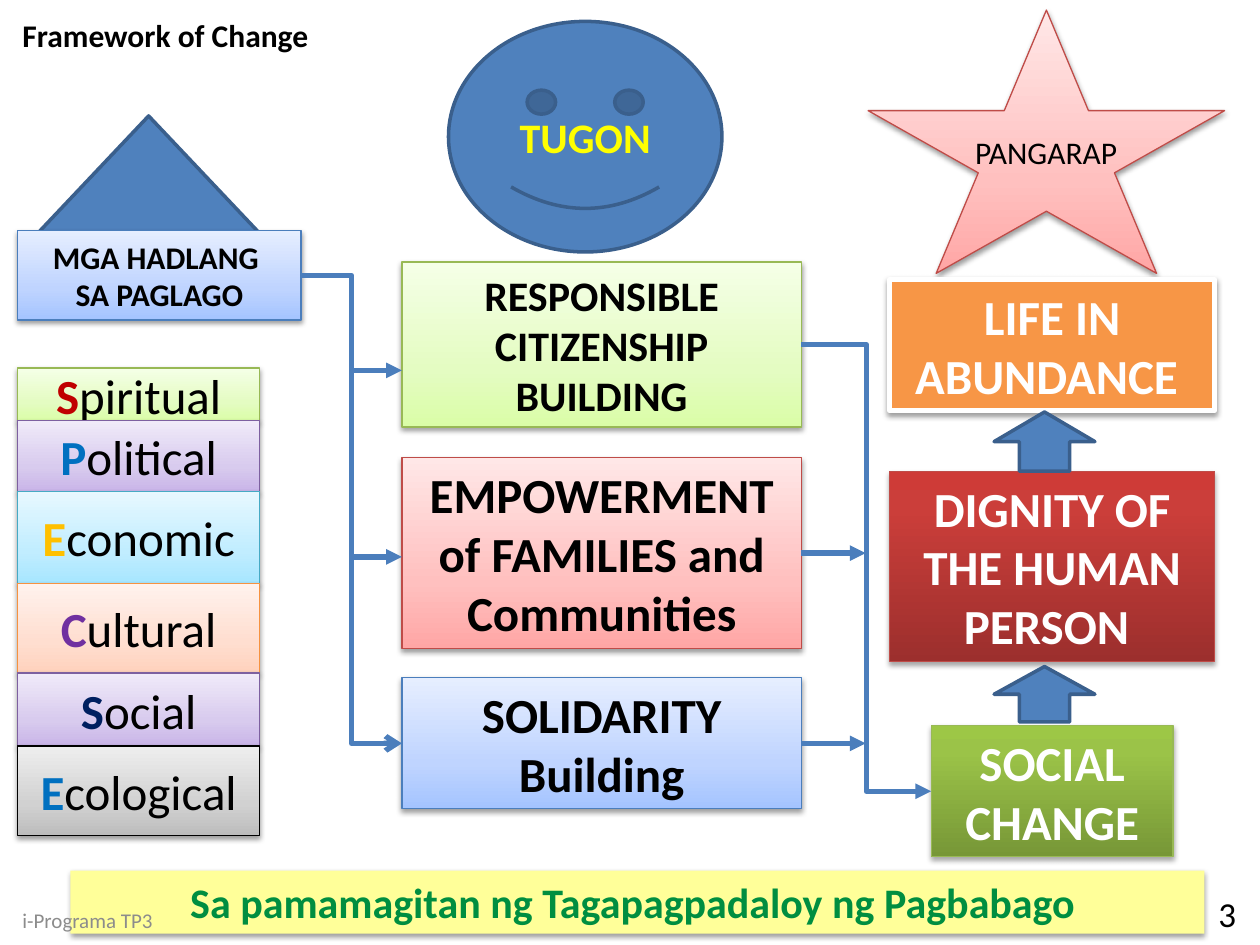
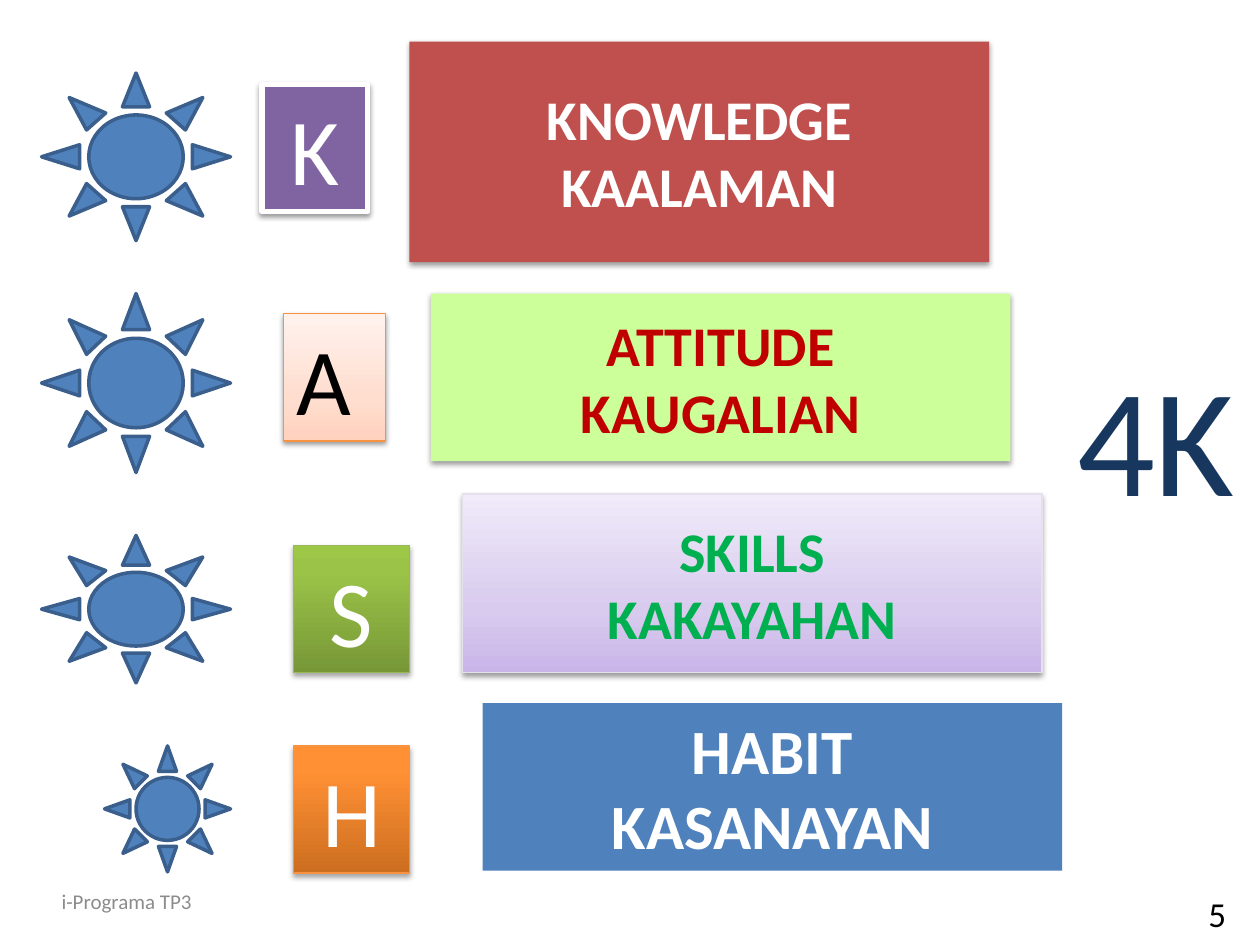
from itertools import accumulate

from lxml import etree
from pptx import Presentation
from pptx.dml.color import RGBColor
from pptx.enum.shapes import MSO_CONNECTOR as Connector, MSO_SHAPE as Preset
from pptx.enum.text import MSO_ANCHOR as Anchor, MSO_AUTO_SIZE as AutoSize, PP_ALIGN as Align
from pptx.oxml.ns import qn
from pptx.util import Inches, Pt

# Shared look
FONT = "Calibri"
COLORS = {
    "black": "000000", "white": "FFFFFF", "grey": "8C8C8C",
    "blue": "4F81BD", "blue edge": "3A5F8C", "connector": "4B7EBC",
    "orange": "F79646", "orange edge": "F69240", "brick": "C0504D",
    "red edge": "BF4C48", "green edge": "98B955", "purple": "8064A2",
    "purple edge": "7D60A0", "aqua edge": "46AAC5", "lilac edge": "E6E0EC",
    "lemon": "FFFF99", "lime": "CCFF99", "yellow": "FFFF00",
    "red text": "C00000", "blue text": "0070C0", "gold text": "FFC000",
    "violet text": "7030A0", "navy text": "002060", "leaf text": "008E40",
    "green text": "00B050", "4K text": "17375E",
}
# Gradient stops run from the bottom edge to the top: (percent, hex)
GRADIENTS = {
    "pale red": [(0, "FFA6A5"), (35, "FFC0BF"), (100, "FFE7E7")],
    "pale green": [(0, "DAFDA7"), (35, "E4FCC2"), (100, "F5FFE7")],
    "pale purple": [(0, "C9B5E8"), (35, "D8CBEE"), (100, "F0EAF9")],
    "pale aqua": [(0, "A7E6FF"), (35, "C1EDFF"), (100, "E7F8FF")],
    "pale orange": [(0, "FFD2BD"), (35, "FFDED0"), (100, "FFF2ED")],
    "pale grey": [(0, "BDBDBD"), (35, "D1D1D1"), (100, "EEEEEE")],
    "pale blue": [(0, "A4C4FF"), (35, "BFD4FF"), (100, "E6EEFF")],
    "deep red": [(0, "9C2F2D"), (80, "CB3E3A"), (100, "CE3B37")],
    "deep green": [(0, "779737"), (80, "9BC348"), (100, "9DC746")],
    "deep orange": [(0, "CC6E20"), (80, "FF9034"), (100, "FF9136")],
}
# Shadows: opacity in percent, distance in points
SOFT, DEEP = (38, 1.6), (35, 1.8)
# Styles: fill, line colour, line width, shadow
STYLES = {
    "plain": ("blue", "blue edge", 2, None),
    "pale red": ("pale red", "red edge", 0.75, SOFT),
    "pale green": ("pale green", "green edge", 0.75, SOFT),
    "pale purple": ("pale purple", "purple edge", 0.75, SOFT),
    "pale lilac": ("pale purple", "lilac edge", 0.75, SOFT),
    "pale aqua": ("pale aqua", "aqua edge", 0.75, SOFT),
    "pale orange": ("pale orange", "orange edge", 0.75, SOFT),
    "pale grey": ("pale grey", "black", 0.75, SOFT),
    "pale blue": ("pale blue", "connector", 0.75, SOFT),
    "deep red": ("deep red", "red edge", 0.75, DEEP),
    "deep green": ("deep green", "green edge", 0.75, DEEP),
    "deep orange": ("deep orange", "orange edge", 0.75, DEEP),
    "framed orange": ("orange", "white", 3, SOFT),
    "framed purple": ("purple", "white", 3, SOFT),
    "brick": ("brick", None, 0, SOFT),
    "lime": ("lime", None, 0, SOFT),
    "lemon": ("lemon", None, 0, SOFT),
    "flat blue": ("blue", None, 0, None),
}
FOOTER = "i-Programa TP3"

# Slide 1 content: Framework of Change
BARRIERS = [  # word, initial colour, style, height
    ("Spiritual", "red text", "pale green", 0.42),
    ("Political", "blue text", "pale purple", 0.56),
    ("Economic", "gold text", "pale aqua", 0.73),
    ("Cultural", "violet text", "pale orange", 0.71),
    ("Social", "navy text", "pale purple", 0.58),
    ("Ecological", "blue text", "pale grey", 0.71),
]
BARRIER_LEFT, BARRIER_TOP, BARRIER_WIDTH = 0.14, 2.92, 1.92
BOXES = {  # name: place, style, lines, size, colour
    "response": ((3.19, 2.08, 3.17, 1.31), "pale green",
                 ["RESPONSIBLE CITIZENSHIP BUILDING"], 24, "black"),
    "families": ((3.19, 3.63, 3.17, 1.52), "pale red",
                 ["EMPOWERMENT of FAMILIES and Communities"], 28, "black"),
    "solidarity": ((3.19, 5.38, 3.17, 1.04), "pale blue",
                   ["SOLIDARITY Building"], 28, "black"),
    "life": ((7.06, 2.22, 2.58, 1.04), "framed orange", ["LIFE IN ABUNDANCE "], 28, "white"),
    "dignity": ((7.06, 3.74, 2.58, 1.51), "deep red",
                ["DIGNITY OF THE HUMAN PERSON "], 28, "white"),
    "change": ((7.39, 5.76, 1.92, 1.04), "deep green", ["SOCIAL CHANGE"], 28, "white"),
    "barriers": ((0.14, 1.83, 2.25, 0.71), "pale blue",
                 ["MGA HADLANG ", "SA PAGLAGO"], 18, "black"),
    "banner": ((0.56, 6.91, 9, 0.5), "lemon",
               ["Sa pamamagitan ng Tagapagpadaloy ng Pagbabago "], 24, "leaf text"),
}
UP_ARROWS = [(7.89, 5.29, 0.8, 0.44), (7.89, 3.27, 0.8, 0.47)]
LEFT_TRUNK, RIGHT_TRUNK, BOX_LEFT, BOX_RIGHT = 2.79, 6.87, 3.19, 6.36
ARROWS = [  # kind, from, to, start box, end box, head
    (Connector.STRAIGHT, (LEFT_TRUNK, 4.42), (BOX_LEFT, 4.42), None, None, "triangle"),
    (Connector.STRAIGHT, (LEFT_TRUNK, 2.94), (BOX_LEFT, 2.94), None, None, "triangle"),
    (Connector.ELBOW, (BOX_RIGHT, 2.74), (7.39, 6.28), "response", "change", "triangle"),
    (Connector.STRAIGHT, (BOX_RIGHT, 4.39), (RIGHT_TRUNK, 4.39), "families", None, "triangle"),
    (Connector.STRAIGHT, (BOX_RIGHT, 5.9), (RIGHT_TRUNK, 5.9), "solidarity", None, "triangle"),
    (Connector.ELBOW, (2.39, 2.19), (BOX_LEFT, 5.9), "barriers", "solidarity", "arrow"),
]

# Slide 2 content: sun, letter tile and word panel of each row
ROWS = [
    {"sun": (0.33, 0.58, 1.5, 1.33),
     "tile": ("K", (2.08, 0.67, 0.84, 1.01), "framed purple", "white"),
     "panel": (["KNOWLEDGE", "KAALAMAN"], (3.25, 0.33, 1.75), "brick", 32, "white")},
    {"sun": (0.33, 2.33, 1.5, 1.42),
     "tile": ("A ", (2.25, 2.49, 0.81, 1.01), "pale orange", "black"),
     "panel": (["ATTITUDE", "KAUGALIAN"], (3.42, 2.33, 1.33), "lime", 32, "red text")},
    {"sun": (0.33, 4.25, 1.5, 1.17),
     "tile": ("S", (2.33, 4.33, 0.92, 1.01), "deep green", "white"),
     "panel": (["SKILLS", "KAKAYAHAN"], (3.67, 3.92, 1.42), "pale lilac", 32, "green text")},
    {"sun": (0.83, 5.92, 1, 1),
     "tile": ("H", (2.33, 5.92, 0.92, 1.01), "deep orange", "white"),
     "panel": (["HABIT", "KASANAYAN"], (3.83, 5.58, 1.33), "flat blue", 36, "white")},
]
PANEL_WIDTH = 4.6


def rgb(name):
    return RGBColor.from_string(COLORS[name])


def set_values(target, values):
    for name, value in values.items():
        setattr(target, name, value)


def add_color(parent, hex_color):
    return etree.SubElement(parent, qn("a:srgbClr"), val=hex_color)


def write_text(frame, lines, size, color, bold=False, align=Align.CENTER, initial=None):
    """Fill a text frame; initial colours the first letter in bold."""
    for index, line in enumerate(lines):
        paragraph = frame.paragraphs[0] if index == 0 else frame.add_paragraph()
        paragraph.alignment = align
        pieces = [(line, color, bold)]
        if initial:
            pieces = [(line[0], initial, True), (line[1:], color, bold)]
        for text, piece_color, piece_bold in pieces:
            run = paragraph.add_run()
            run.text = text
            set_values(run.font, {"name": FONT, "size": Pt(size), "bold": piece_bold})
            run.font.color.rgb = rgb(piece_color)


def paint(shape, style):
    fill, line_color, line_width, shadow = STYLES[style]
    if fill in GRADIENTS:
        shape.fill.gradient()
        shape.fill.gradient_angle = 90
        stops = shape.element.spPr.find(".//" + qn("a:gsLst"))
        for stop in list(stops):
            stops.remove(stop)
        for percent, hex_color in GRADIENTS[fill]:
            add_color(etree.SubElement(stops, qn("a:gs"), pos=str(percent * 1000)), hex_color)
    else:
        shape.fill.solid()
        shape.fill.fore_color.rgb = rgb(fill)
    if line_color:
        shape.line.color.rgb = rgb(line_color)
        shape.line.width = Pt(line_width)
    else:
        shape.line.fill.background()
    shape.shadow.inherit = False
    if shadow:
        opacity, distance = shadow
        effects = shape.element.spPr.find(qn("a:effectLst"))
        outer = etree.SubElement(effects, qn("a:outerShdw"), blurRad=str(Pt(3.1)),
                                 dist=str(Pt(distance)), dir="5400000", rotWithShape="0")
        etree.SubElement(add_color(outer, COLORS["black"]), qn("a:alpha"), val=str(opacity * 1000))


def add_block(slide, preset, place, style, lines=(), size=18, color="black", **text_format):
    shape = slide.shapes.add_shape(preset, *map(Inches, place))
    paint(shape, style)
    set_values(shape.text_frame, {"word_wrap": True, "vertical_anchor": Anchor.MIDDLE})
    write_text(shape.text_frame, lines, size, color, **text_format)
    return shape


def add_label(slide, place, text, size, color, fitted=True, **text_format):
    frame = slide.shapes.add_textbox(*map(Inches, place)).text_frame
    if fitted:
        values = {"word_wrap": False, "auto_size": AutoSize.SHAPE_TO_FIT_TEXT}
    else:
        values = {"word_wrap": True, "vertical_anchor": Anchor.MIDDLE}
    set_values(frame, values)
    write_text(frame, [text], size, color, **{"align": Align.LEFT, **text_format})


def add_footer(slide, footer_at, number, number_at):
    add_label(slide, (*footer_at, 2.33, 0.4), FOOTER, 12, "grey", fitted=False)
    add_label(slide, (*number_at, 2.33, 0.4), number, 20, "black", fitted=False, align=Align.RIGHT)


def add_arrow(slide, kind, start, end, start_box, end_box, head):
    connector = slide.shapes.add_connector(kind, *map(Inches, start + end))
    if start_box:
        connector.begin_connect(start_box, 3)
    if end_box:
        connector.end_connect(end_box, 1)
    connector.line.color.rgb = rgb("connector")
    connector.line.width = Pt(3)
    properties = connector.element.spPr
    etree.SubElement(properties.find(qn("a:ln")), qn("a:tailEnd"), type=head)
    etree.SubElement(properties, qn("a:effectLst"))


def build_framework(slide):
    # Symbols above the three columns
    add_block(slide, Preset.ISOSCELES_TRIANGLE, (0.31, 0.92, 1.74, 0.92), "plain")
    add_block(slide, Preset.SMILEY_FACE, (3.56, 0.17, 2.17, 1.83), "plain",
              ["TUGON"], 24, "yellow", bold=True)
    add_block(slide, Preset.STAR_5_POINT, (6.89, 0.08, 2.83, 2.09), "pale red")
    # Column of barriers, each starting where the last one ends
    tops = accumulate((height for *_, height in BARRIERS), initial=BARRIER_TOP)
    for top, (word, initial, style, height) in zip(tops, BARRIERS):
        add_block(slide, Preset.RECTANGLE, (BARRIER_LEFT, top, BARRIER_WIDTH, height),
                  style, [word], 28, initial=initial)
    # Boxes and the arrows between them
    boxes = {name: add_block(slide, Preset.RECTANGLE, *content, bold=True)
             for name, content in BOXES.items()}
    for place in UP_ARROWS:
        add_block(slide, Preset.UP_ARROW, place, "plain")
    for kind, start, end, start_name, end_name, head in ARROWS:
        add_arrow(slide, kind, start, end, boxes.get(start_name), boxes.get(end_name), head)
    # Labels
    add_label(slide, (0.08, 0.08, 2.49, 0.4), "Framework of Change", 18, "black", bold=True)
    add_label(slide, (7.64, 1.01, 1.34, 0.4), "PANGARAP", 18, "black")
    add_footer(slide, (0.08, 7.1), "3", (7.58, 7.05))


def build_four_k(slide):
    for row in ROWS:
        add_block(slide, Preset.SUN, row["sun"], "plain")
        lines, (left, top, height), style, size, color = row["panel"]
        add_block(slide, Preset.RECTANGLE, (left, top, PANEL_WIDTH, height),
                  style, lines, size, color, bold=True)
        letter, place, style, color = row["tile"]
        add_block(slide, Preset.RECTANGLE, place, style, [letter], 54, color)
    add_label(slide, (8.45, 2.67, 1.47, 1.58), "4K", 88, "4K text")
    add_footer(slide, (0.39, 6.95), "5", (7.5, 7.05))


def main():
    presentation = Presentation()
    set_values(presentation, {"slide_width": Inches(10), "slide_height": Inches(7.5)})
    for build in (build_framework, build_four_k):
        build(presentation.slides.add_slide(presentation.slide_layouts[6]))
    presentation.save("out.pptx")


if __name__ == "__main__":
    main()
